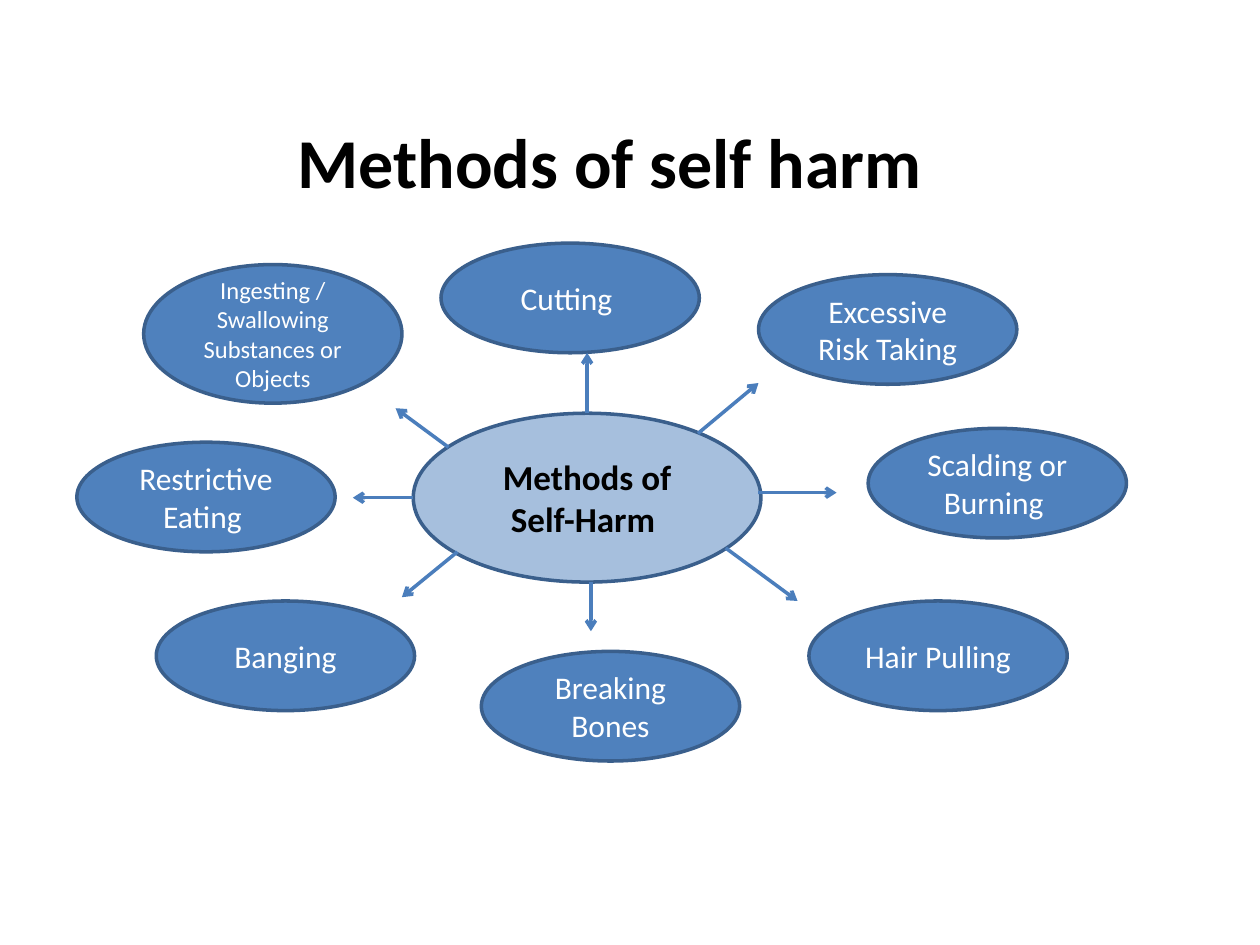
from lxml import etree
from pptx import Presentation
from pptx.dml.color import RGBColor
from pptx.enum.shapes import MSO_CONNECTOR, MSO_SHAPE
from pptx.enum.text import MSO_ANCHOR, PP_ALIGN
from pptx.oxml.ns import qn
from pptx.util import Inches, Pt

OVAL = MSO_SHAPE.OVAL
STRAIGHT = MSO_CONNECTOR.STRAIGHT
CENTER = PP_ALIGN.CENTER
MIDDLE = MSO_ANCHOR.MIDDLE
TITLE_ONLY = 5

METHOD_WIDTH, METHOD_HEIGHT = 2.05, 0.87
METHODS = [
    ("Ingesting / Swallowing Substances or Objects", 1.14, 2.1, 1.1, 14),
    ("Cutting ", 3.5, 1.93, METHOD_HEIGHT, 18),
    ("Restrictive Eating ", 0.61, 3.51, METHOD_HEIGHT, 18),
    ("Banging", 1.24, 4.77, METHOD_HEIGHT, 18),
    ("Breaking Bones", 3.82, 5.17, METHOD_HEIGHT, 18),
    ("Hair Pulling", 6.42, 4.77, METHOD_HEIGHT, 18),
    ("Scalding or Burning ", 6.89, 3.4, METHOD_HEIGHT, 18),
    ("Excessive Risk Taking", 6.02, 2.18, METHOD_HEIGHT, 18),
]
ARROWS = [
    (4.66, 3.28, 4.66, 2.8),
    (5.54, 3.44, 6.02, 3.04),
    (6.02, 3.91, 6.64, 3.91),
    (5.76, 4.35, 6.33, 4.77),
    (3.56, 3.55, 3.14, 3.24),
    (4.69, 4.62, 4.69, 5.01),
    (3.63, 4.38, 3.19, 4.74),
    (3.28, 3.95, 2.8, 3.95),
]


def rgb(value):
    return RGBColor.from_string(value)


def write_text(frame, text, size=18, color="FFFFFF", bold=False):
    frame.word_wrap = True
    frame.vertical_anchor = MIDDLE
    paragraph = frame.paragraphs[0]
    paragraph.alignment = CENTER
    run = paragraph.add_run()
    run.text = text
    run.font.name = "Calibri"
    run.font.size = Pt(size)
    run.font.bold = bold
    run.font.color.rgb = rgb(color)


class MethodsMap:
    fill = "4F81BD"
    outline = "3A5F8C"
    arrow_color = "4B7EBC"
    dark = "000000"
    line_width = Pt(2)

    def __init__(self, slide):
        self.slide = slide

    def title(self, text, left, top, width, height):
        heading = self.slide.shapes.title
        heading.left, heading.top = Inches(left), Inches(top)
        heading.width, heading.height = Inches(width), Inches(height)
        write_text(heading.text_frame, text, size=40, color=self.dark, bold=True)

    def ellipse(self, text, left, top, width, height, opacity=None, **text_format):
        oval = self.slide.shapes.add_shape(
            OVAL, Inches(left), Inches(top), Inches(width), Inches(height))
        oval.shadow.inherit = False
        oval.fill.solid()
        oval.fill.fore_color.rgb = rgb(self.fill)
        oval.line.color.rgb = rgb(self.outline)
        oval.line.width = self.line_width
        if opacity is not None:
            color = oval.fill._xPr.find(qn("a:solidFill"))[0]
            etree.SubElement(color, qn("a:alpha"), val=str(opacity * 1000))
        write_text(oval.text_frame, text, **text_format)

    def arrow(self, *ends):
        connector = self.slide.shapes.add_connector(
            STRAIGHT, *(Inches(end) for end in ends))
        connector.line.color.rgb = rgb(self.arrow_color)
        connector.line.width = self.line_width
        etree.SubElement(connector.line._get_or_add_ln(), qn("a:tailEnd"), type="arrow")
        etree.SubElement(connector._element.spPr, qn("a:effectLst"))


def main():
    deck = Presentation()
    deck.slide_width, deck.slide_height = Inches(10), Inches(7.5)
    chart = MethodsMap(deck.slides.add_slide(deck.slide_layouts[TITLE_ONLY]))
    chart.title("Methods of self harm", 0.42, 0.84, 8.84, 0.87)
    chart.ellipse("Methods of Self-Harm ", 3.28, 3.28, 2.76, 1.34,
                  opacity=50, size=20, color=chart.dark, bold=True)
    for method, left, top, height, size in METHODS:
        chart.ellipse(method, left, top, METHOD_WIDTH, height, size=size)
    for ends in ARROWS:
        chart.arrow(*ends)
    deck.save("out.pptx")


if __name__ == "__main__":
    main()
